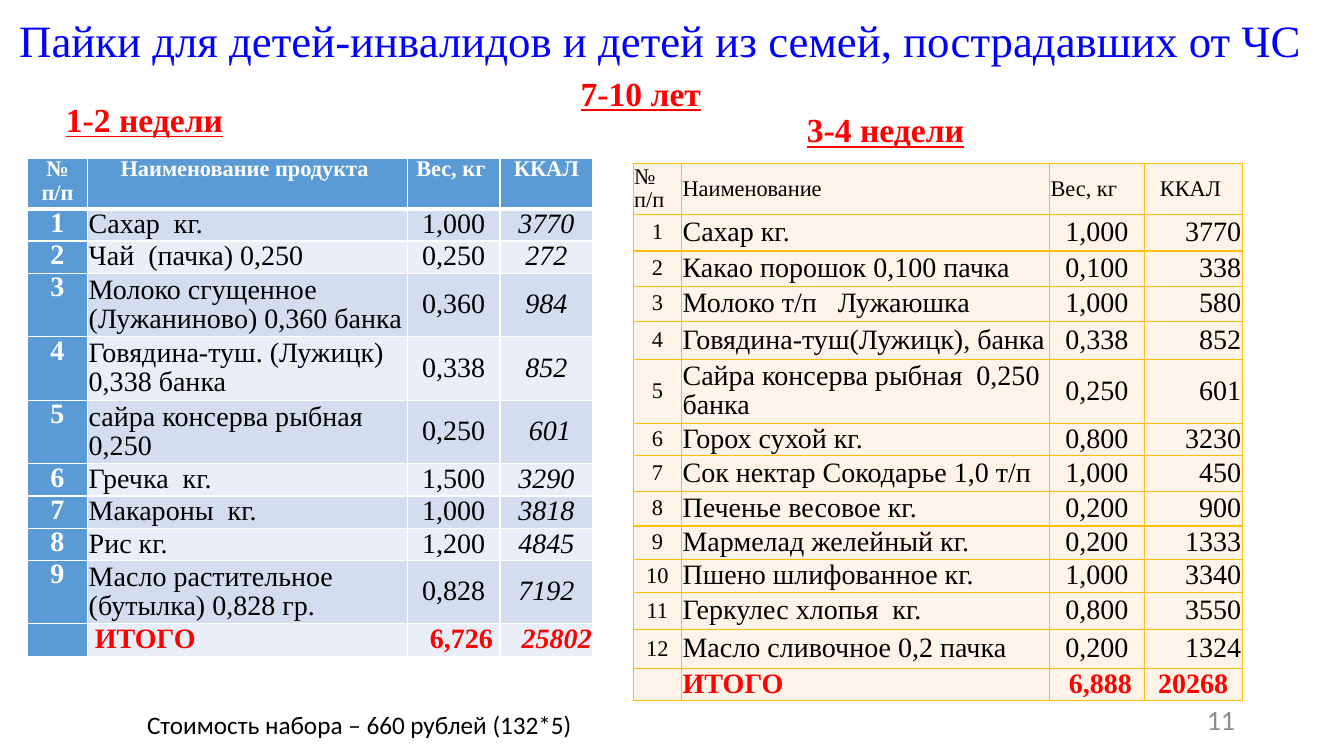
import pptx
import pptx.util
import pptx.dml.color
import pptx.enum.text
import pptx.oxml
from pptx.util import Inches

COLORS = {"title": "0000FF", "accent": "FF0000", "text": "000000", "white": "FFFFFF",
          "number": "8C8C8C", "blue": "5B9BD5", "band_dark": "D2DEEF",
          "band_light": "EAEFF7", "cream": "FFF4E7", "gold": "FFC000"}
SERIF, SANS = "Times New Roman", "Calibri"
ALIGN = {"l": pptx.enum.text.PP_ALIGN.LEFT, "c": pptx.enum.text.PP_ALIGN.CENTER,
         "r": pptx.enum.text.PP_ALIGN.RIGHT}
TOP, MIDDLE = pptx.enum.text.MSO_ANCHOR.TOP, pptx.enum.text.MSO_ANCHOR.MIDDLE

# Content
TITLE = "Пайки для детей-инвалидов и детей из семей, пострадавших от ЧС"
HEADINGS = [  # text, left, top, width
    ("7-10 лет", 5.54, 0.72, 1.51),
    ("1-2 недели", 0.3, 0.98, 2.01),
    ("3-4 недели", 6.3, 1.08, 3.36),
]
COST = "Стоимость набора – 660 рублей (132*5)"
PAGE_NUMBER = "11"

EARLY_WEEKS = [
    ("№ п/п", "Наименование продукта ", "Вес, кг ", "ККАЛ"),
    ("1", "Сахар  кг.", "1,000", "3770"),
    ("2", "Чай  (пачка) 0,250", "0,250", "272"),
    ("3", "Молоко сгущенное (Лужаниново) 0,360 банка", "0,360", "984"),
    ("4", "Говядина-туш. (Лужицк) 0,338 банка", "0,338", "852"),
    ("5", "сайра консерва рыбная 0,250", "0,250", "\u00a0601"),
    ("6", "Гречка  кг.", "1,500", "3290"),
    ("7", "Макароны  кг.", "1,000", "3818"),
    ("8", "Рис кг.", "1,200", "4845"),
    ("9", "Масло растительное (бутылка) 0,828 гр.", "0,828", "7192"),
    ("", "ИТОГО", "6,726", "25802"),
]
EARLY_WIDTHS = [0.6, 3.17, 0.92, 0.92]
ONE_LINE, TWO_LINES = 0.32, 0.63
EARLY_TWO_LINE_ROWS = {3, 4, 5, 9}

LATE_WEEKS = [
    ("№ п/п", "Наименование", "Вес, кг", "ККАЛ "),
    ("1", "Сахар кг.", "1,000", "3770"),
    ("2", "Какао порошок 0,100 пачка", "0,100", "338"),
    ("3", "Молоко т/п   Лужаюшка", "1,000", "580"),
    ("4", "Говядина-туш(Лужицк), банка", "0,338", "852"),
    ("5", "Сайра консерва рыбная  0,250 банка", "0,250", "601"),
    ("6", "Горох сухой кг.", "0,800", "3230"),
    ("7", "Сок нектар Сокодарье 1,0 т/п", "1,000", "450"),
    ("8", "Печенье весовое кг.", "0,200", "900"),
    ("9", "Мармелад желейный кг.", "0,200", "1333"),
    ("10", "Пшено шлифованное кг.", "1,000", "3340"),
    ("11", "Геркулес хлопья  кг.", "0,800", "3550"),
    ("12", "Масло сливочное 0,2 пачка", "0,200", "1324"),
    ("", "ИТОГО", "\u00a06,888", "20268"),
]
LATE_WIDTHS = [0.48, 3.65, 0.94, 0.97]
LATE_HEIGHTS = [0.51, 0.36, 0.35, 0.35, 0.38, 0.63, 0.32, 0.36, 0.34, 0.33, 0.33,
                0.37, 0.38, 0.32]
TABLE_SPACING = 0.94


def rgb(name):
    return pptx.dml.color.RGBColor.from_string(COLORS[name])


def write(frame, text, size, color, align="l", face=SERIF, bold=False, italic=False,
          underline=False, spacing=None):
    frame.word_wrap = True
    para = frame.paragraphs[0]
    para.alignment = ALIGN[align]
    if spacing:
        para.line_spacing = spacing
    if not text:
        return
    span = para.add_run()
    span.text = text
    font = span.font
    font.name, font.size, font.color.rgb = face, pptx.util.Pt(size), rgb(color)
    font.bold, font.italic, font.underline = bold, italic, underline


def add_text(page, at, text, size, color, anchor=TOP, **style):
    box = page.shapes.add_textbox(*map(Inches, at))
    box.text_frame.vertical_anchor = anchor
    write(box.text_frame, text, size, color, **style)


def set_borders(cell, color, top=1, bottom=1):
    properties = cell._tc.get_or_add_tcPr()
    sides = (("lnL", 1), ("lnR", 1), ("lnT", top), ("lnB", bottom))
    for position, (side, points) in enumerate(sides):
        properties.insert(position, pptx.oxml.parse_xml(
            f'<a:{side} xmlns:a="http://schemas.openxmlformats.org/drawingml/2006/main" '
            f'w="{points * 12700}"><a:solidFill><a:srgbClr val="{COLORS[color]}"/>'
            f'</a:solidFill></a:{side}>'))


def early_style(row, col, last):
    """Blue header and number column, banded rows, italic calories."""
    style = {"fill": "blue", "color": "white", "size": 20, "align": "c", "bold": True,
             "anchor": TOP, "inset": 0.07, "line": "white"}
    if row == 0:
        style.update(size=16, bottom=3)
    elif col > 0:
        total = row == last
        style.update(fill="band_dark" if row % 2 else "band_light", anchor=MIDDLE,
                     color="accent" if total else "text", bold=total, italic=col == 3,
                     align="llrr"[col] if total else "clcc"[col],
                     inset=0.07 if total and col < 3 else 0.01)
    if row == 1:
        style["top"] = 3
    return style


def late_style(row, col, last):
    """Cream cells with gold lines, calories to the right."""
    total = row == last
    align = "lllc" if row == 0 else "clcc" if total else "clcr"
    return {"fill": "cream", "color": "accent" if total else "text", "bold": total,
            "size": 16 if row == 0 or col == 0 else 20, "align": align[col],
            "anchor": MIDDLE, "inset": 0.01, "line": "gold"}


def add_ration_table(page, left, top, rows, widths, heights, style_of):
    frame = page.shapes.add_table(len(rows), len(widths), Inches(left), Inches(top),
                                  Inches(sum(widths)), Inches(sum(heights)))
    table = frame.table
    for column, width in zip(table.columns, widths):
        column.width = Inches(width)
    for line, height in zip(table.rows, heights):
        line.height = Inches(height)
    for r, values in enumerate(rows):
        for c, text in enumerate(values):
            cell = table.cell(r, c)
            style = style_of(r, c, len(rows) - 1)
            cell.margin_left = cell.margin_right = Inches(style.pop("inset"))
            cell.margin_top = cell.margin_bottom = 0
            cell.vertical_anchor = style.pop("anchor")
            cell.fill.solid()
            cell.fill.fore_color.rgb = rgb(style.pop("fill"))
            set_borders(cell, style.pop("line"), style.pop("top", 1),
                        style.pop("bottom", 1))
            write(cell.text_frame, text, spacing=TABLE_SPACING, **style)


def main():
    deck = pptx.Presentation()
    deck.slide_width, deck.slide_height = Inches(13.33), Inches(7.5)
    page = deck.slides.add_slide(deck.slide_layouts[5])

    # Title and headings
    title = page.shapes.title
    title.left, title.top, title.width, title.height = map(Inches, (0.09, 0.11, 13.03, 0.64))
    title.text_frame.vertical_anchor = MIDDLE
    title.text_frame.auto_size = pptx.enum.text.MSO_AUTO_SIZE.NONE
    write(title.text_frame, TITLE, 32, "title", spacing=0.9)
    for text, left, top, width in HEADINGS:
        add_text(page, (left, top, width, 0.59), text, 24, "accent", align="r",
                 bold=True, underline=True, spacing=0.9)

    # Ration tables
    early_heights = [0.49] + [TWO_LINES if r in EARLY_TWO_LINE_ROWS else ONE_LINE
                              for r in range(1, len(EARLY_WEEKS))]
    add_ration_table(page, 0.27, 1.57, EARLY_WEEKS, EARLY_WIDTHS, early_heights, early_style)
    add_ration_table(page, 6.28, 1.62, LATE_WEEKS, LATE_WIDTHS, LATE_HEIGHTS, late_style)

    # Cost and page number
    add_text(page, (1.36, 6.99, 5.51, 0.4), COST, 18, "text", face=SANS)
    add_text(page, (9.35, 6.94, 3, 0.4), PAGE_NUMBER, 20, "number", anchor=MIDDLE,
             align="r", face=SANS)
    deck.save("out.pptx")


if __name__ == "__main__":
    main()
